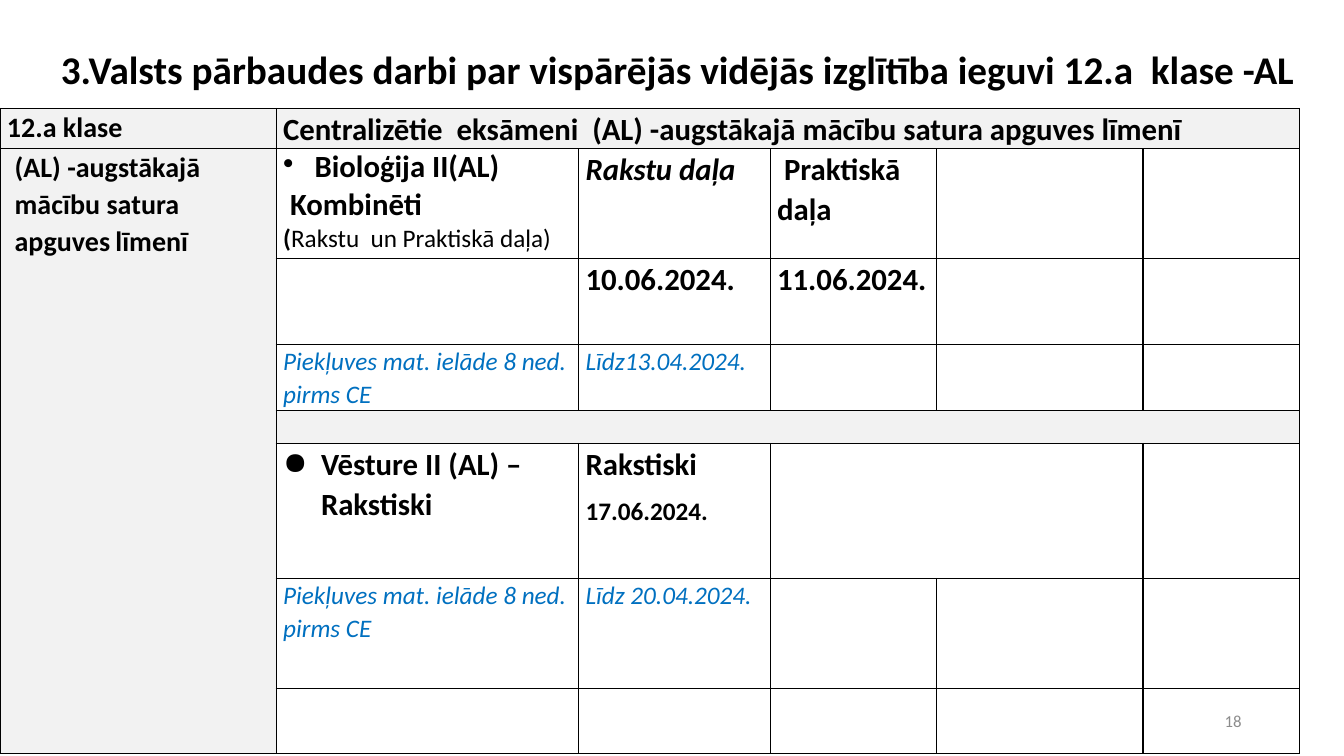
from lxml import etree
from pptx import Presentation
from pptx import util as u
from pptx.dml import color
from pptx.enum import text
from pptx.oxml import ns

Pt = u.Pt
FONT = "Calibri"
COLORS = {"black": "000000", "blue": "0070C0", "shade": "F2F2F2", "number": "8C8C8C"}
COLUMNS = [197.3, 216, 136.8, 118.8, 147.6, 111.6]
ROWS = [28.6, 78.6, 61.4, 47.1, 23.6, 96.4, 78.6, 46.4]
MERGES = [((0, 1), (0, 5)), ((1, 0), (7, 0)), ((4, 1), (4, 5)), ((5, 3), (5, 4))]
SHADED = [(0, 0), (0, 1), (1, 0), (4, 1)]


def rgb(name):
    return color.RGBColor.from_string(COLORS[name])


def add_run(paragraph, words, size, bold=True, italic=False, ink="black"):
    run = paragraph.add_run()
    run.text = words
    font = run.font
    font.name, font.size, font.bold, font.italic = FONT, Pt(size), bold, italic
    font.color.rgb = rgb(ink)


def line(*runs, spacing=1.07, after=8, left=0, first=0, bullet=None, tab=None):
    """Describe one paragraph; each run is (words, size, bold, italic, ink)."""
    return {"runs": runs, "spacing": spacing, "after": after, "left": left,
            "first": first, "bullet": bullet, "tab": tab}


def access_note(words):
    return [line((words, 18, False, True, "blue"))]


ACCESS = access_note("Piekļuves mat. ielāde 8 ned. pirms CE")
CELLS = {
    (0, 0): [line(("12.a klase", 20))],
    (0, 1): [line(("Centralizētie  eksāmeni  (AL) -augstākajā mācību satura apguves līmenī", 22))],
    (1, 0): [line(("(AL) -augstākajā mācību satura apguves\tlīmenī", 20), left=5.5, tab=128.5)],
    (1, 1): [line(("Bioloģija II(AL)", 22), spacing=1, after=0, left=22.5, first=-22.5, bullet="•"),
             line((" Kombinēti", 22), spacing=1, after=0),
             line(("(", 18), ("Rakstu  un Praktiskā daļa)", 18, False), spacing=1, after=0)],
    (1, 2): [line(("Rakstu daļa", 22, True, True))],
    (1, 3): [line(("Praktiskā daļa", 22), first=5)],
    (2, 2): [line(("10.06.2024.", 22))],
    (2, 3): [line(("11.06.2024.", 22))],
    (3, 1): ACCESS,
    (3, 2): access_note("Līdz13.04.2024."),
    (5, 1): [line(("Vēsture II (AL) –Rakstiski", 22), left=27, first=-27, bullet="●")],
    (5, 2): [line(("Rakstiski", 22)), line(("17.06.2024.", 18))],
    (6, 1): ACCESS,
    (6, 2): access_note("Līdz 20.04.2024."),
}


def write_paragraph(paragraph, content):
    paragraph.line_spacing = content["spacing"]
    paragraph.space_after = Pt(content["after"])
    properties = paragraph._p.get_or_add_pPr()
    properties.set("marL", str(Pt(content["left"])))
    properties.set("indent", str(Pt(content["first"])))
    if content["bullet"]:
        etree.SubElement(properties, ns.qn("a:buChar")).set("char", content["bullet"])
    if content["tab"]:
        stops = etree.SubElement(properties, ns.qn("a:tabLst"))
        stop = etree.SubElement(stops, ns.qn("a:tab"))
        stop.set("pos", str(Pt(content["tab"])))
        stop.set("algn", "l")
    for run in content["runs"]:
        add_run(paragraph, *run)


def style_cell(cell, shaded):
    cell.margin_left = cell.margin_right = Pt(5)
    cell.margin_top = cell.margin_bottom = 0
    if shaded:
        cell.fill.solid()
        cell.fill.fore_color.rgb = rgb("shade")
    else:
        cell.fill.background()
    properties = cell._tc.get_or_add_tcPr()
    for index, side in enumerate(["lnL", "lnR", "lnT", "lnB"]):
        border = etree.Element(ns.qn("a:" + side), w=str(Pt(1)))
        fill = etree.SubElement(border, ns.qn("a:solidFill"))
        etree.SubElement(fill, ns.qn("a:srgbClr")).set("val", COLORS["black"])
        properties.insert(index, border)


# Heading
def add_title(slide, left, top, width, height):
    title = slide.shapes.title
    title.left, title.top, title.width, title.height = map(Pt, (left, top, width, height))
    frame = title.text_frame
    frame.word_wrap = True
    frame.auto_size = text.MSO_AUTO_SIZE.NONE
    frame.vertical_anchor = text.MSO_ANCHOR.MIDDLE
    paragraph = frame.paragraphs[0]
    paragraph.alignment = text.PP_ALIGN.CENTER
    paragraph.line_spacing = 0.9
    add_run(paragraph, "3.Valsts pārbaudes darbi par vispārējās vidējās izglītība ieguvi 12.a  klase -AL", 28)


# Exam timetable
def add_exam_table(slide, left, top):
    table = slide.shapes.add_table(len(ROWS), len(COLUMNS), Pt(left), Pt(top),
                                   Pt(sum(COLUMNS)), Pt(sum(ROWS))).table
    table.first_row = table.horz_banding = False
    for column, width in zip(table.columns, COLUMNS):
        column.width = Pt(width)
    for row, height in zip(table.rows, ROWS):
        row.height = Pt(height)
    for start, end in MERGES:
        table.cell(*start).merge(table.cell(*end))
    for row in range(len(ROWS)):
        for column in range(len(COLUMNS)):
            style_cell(table.cell(row, column), (row, column) in SHADED)
    for place, contents in CELLS.items():
        frame = table.cell(*place).text_frame
        for index, content in enumerate(contents):
            paragraph = frame.add_paragraph() if index else frame.paragraphs[0]
            write_paragraph(paragraph, content)


# Page number
def add_page_number(slide, left, top, width, height):
    frame = slide.shapes.add_textbox(*map(Pt, (left, top, width, height))).text_frame
    frame.word_wrap = True
    frame.vertical_anchor = text.MSO_ANCHOR.MIDDLE
    paragraph = frame.paragraphs[0]
    paragraph.alignment = text.PP_ALIGN.RIGHT
    add_run(paragraph, "18", 12, bold=False, ink="number")


def main():
    presentation = Presentation()
    presentation.slide_width, presentation.slide_height = Pt(960), Pt(540)
    slide = presentation.slides.add_slide(presentation.slide_layouts[5])
    add_title(slide, 20, 11, 927.5, 81)
    add_exam_table(slide, 0, 77.5)
    add_page_number(slide, 678, 500.5, 216, 29)
    presentation.save("out.pptx")


if __name__ == "__main__":
    main()
